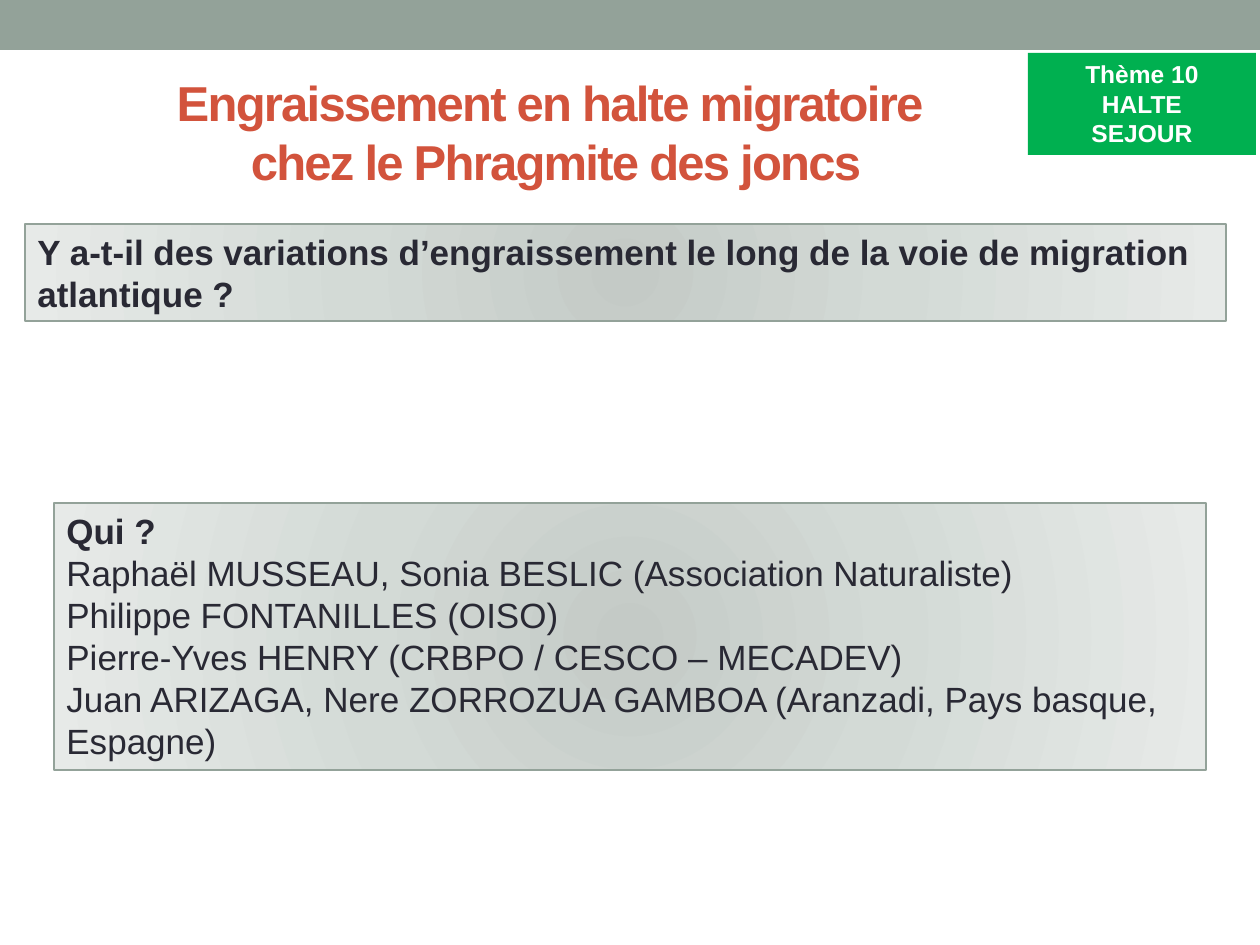
from lxml.etree import SubElement
from pptx import Presentation
from pptx.dml.color import RGBColor
from pptx.enum.shapes import MSO_SHAPE
from pptx.enum.text import MSO_ANCHOR, PP_ALIGN
from pptx.oxml.ns import qn
from pptx.util import Pt

PX = 914400 // 126
COLORS = {"band": "93A299", "title": "D2533C", "tag": "00B050", "white": "FFFFFF", "ink": "292934"}
GRADIENT = {0: "C4CAC6", 45: "D3DAD6", 100: "E7EAE8"}


class Deck:
    """Holds the style and the current slide, and draws each kind of element."""

    def __init__(self, prs):
        self.font = "Arial"
        self.s = prs.slides.add_slide(prs.slide_layouts[6])

    def color(self, name):
        return RGBColor.from_string(COLORS[name])

    def rect(self, box, fill=None):
        sp = self.s.shapes.add_shape(MSO_SHAPE.RECTANGLE, *(v * PX for v in box))
        sp.shadow.inherit = False
        sp.line.fill.background()
        if fill:
            sp.fill.solid()
            sp.fill.fore_color.rgb = self.color(fill)
        return sp

    def put_text(self, sp, lines, size, color, align=PP_ALIGN.LEFT, anchor=MSO_ANCHOR.TOP, bold_lines=None):
        tf = sp.text_frame
        tf.word_wrap = True
        tf.vertical_anchor = anchor
        tf.text = "\n".join(lines)
        for i, p in enumerate(tf.paragraphs):
            p.alignment = align
            for r in p.runs:
                r.font.name = self.font
                r.font.size = Pt(size)
                r.font.bold = bold_lines is None or i < bold_lines
                r.font.color.rgb = self.color(color)

    def title(self, box, text):
        sp = self.s.shapes.add_textbox(*(v * PX for v in box))
        self.put_text(sp, [text], 28, "title", PP_ALIGN.CENTER, MSO_ANCHOR.MIDDLE)
        for r in sp.text_frame.paragraphs[0].runs:
            r.font._element.set("spc", "-100")

    def tag(self, box, lines):
        self.put_text(self.rect(box, "tag"), lines, 14, "white", PP_ALIGN.CENTER)

    def panel(self, box, lines, bold_lines):
        sp = self.rect(box)
        sp.line.color.rgb = self.color("band")
        sp.line.width = Pt(0.75)
        sp.fill.gradient()
        grad = sp._element.spPr.find(qn("a:gradFill"))
        for child in list(grad):
            grad.remove(child)
        stops = SubElement(grad, qn("a:gsLst"))
        for pos, hex_color in GRADIENT.items():
            stop = SubElement(stops, qn("a:gs"), pos=str(pos * 1000))
            SubElement(stop, qn("a:srgbClr"), val=hex_color)
        circle = SubElement(grad, qn("a:path"), {"path": "circle"})
        SubElement(circle, qn("a:fillToRect"), {side: "100000" for side in "ltrb"})
        self.put_text(sp, lines, 20, "ink", bold_lines=bold_lines)


def main():
    prs = Presentation()
    prs.slide_width, prs.slide_height = 1260 * PX, 945 * PX
    deck = Deck(prs)
    deck.rect((0, 0, 1260, 50), "band")
    deck.title((-74, 78, 1260, 107), "Engraissement en halte migratoire \vchez le Phragmite des joncs")
    deck.tag((1028, 53, 228, 102), ["Thème 10", "HALTE", "SEJOUR"])
    deck.panel((25, 224, 1201, 97), [
        "Y a-t-il des variations d’engraissement le long de la voie de migration atlantique ?",
    ], 1)
    deck.panel((54, 503, 1152, 267), [
        "Qui ?",
        "Raphaël MUSSEAU, Sonia BESLIC (Association Naturaliste)",
        "Philippe FONTANILLES (OISO)",
        "Pierre-Yves HENRY (CRBPO / CESCO – MECADEV)",
        "Juan ARIZAGA, Nere ZORROZUA GAMBOA (Aranzadi, Pays basque, \tEspagne)",
    ], 1)
    prs.save("out.pptx")


if __name__ == "__main__":
    main()
